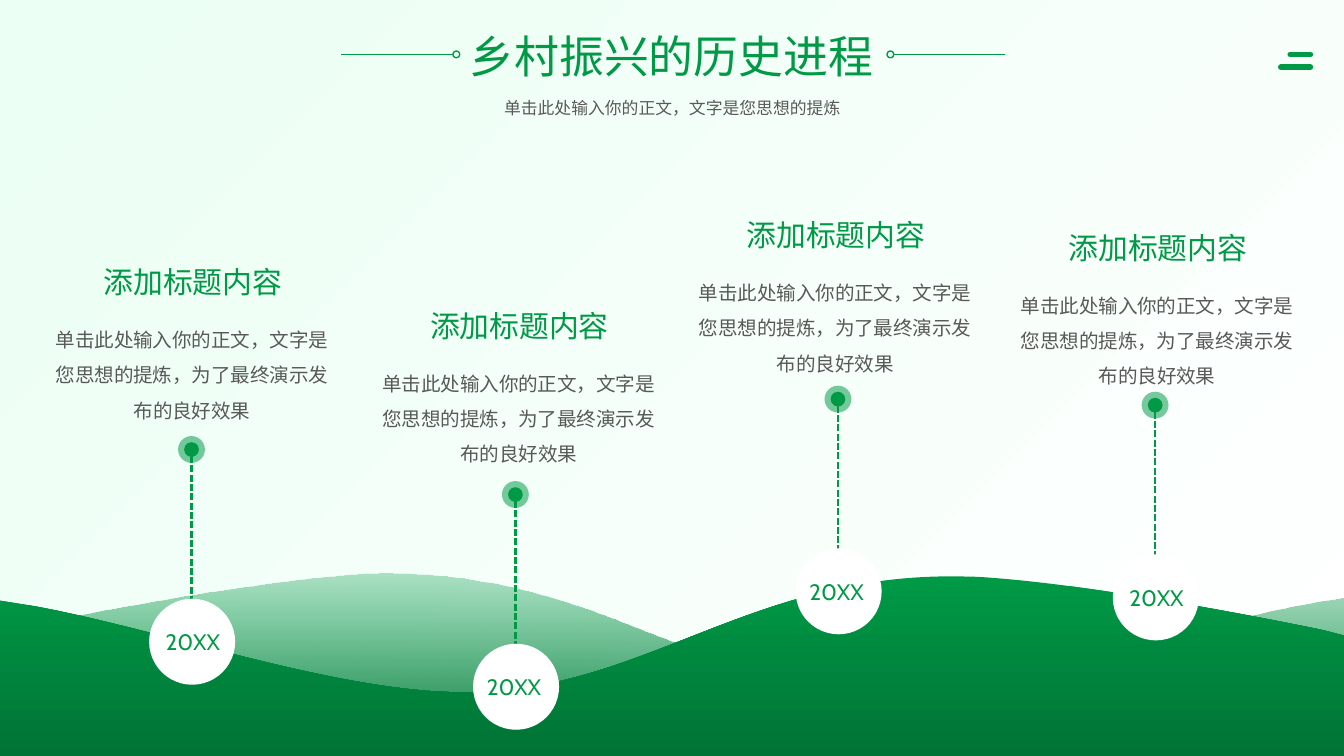
import pptx
import pptx.dml.color
import pptx.enum.dml
import pptx.enum.shapes
import pptx.enum.text
import pptx.oxml.xmlchemy
import pptx.util
from dataclasses import dataclass

PX = 4572  # EMU per px, 200 px to the inch
W, H = 2000, 1125
OVAL = pptx.enum.shapes.MSO_SHAPE.OVAL
STRAIGHT = pptx.enum.shapes.MSO_CONNECTOR.STRAIGHT
MIDDLE = pptx.enum.text.MSO_ANCHOR.MIDDLE
TOP = pptx.enum.text.MSO_ANCHOR.TOP
DASH = pptx.enum.dml.MSO_LINE.SQUARE_DOT


@dataclass(frozen=True)
class Theme:
    green: str = "009946"
    dark: str = "007335"
    mint: str = "EBFFF4"
    white: str = "FFFFFF"
    grey: str = "595959"
    cjk: str = "Noto Sans CJK SC"
    latin: str = "Cabin"
    title: float = 24
    subtitle: float = 9
    heading: float = 16
    body: float = 10.5
    body_pitch: float = 18.9
    year: float = 12


T = Theme()
HEADING = "添加标题内容"
BODY = "单击此处输入你的正文，文字是您思想的提炼，为了最终演示发布的良好效果"
# caption left, caption top, ring left, ring top, year left
MILESTONES = [
    (65, 382, 265, 649, 191),
    (551, 447, 747, 716, 669),
    (1022, 312, 1227, 574, 1149),
    (1501, 331, 1699, 583, 1625),
]
# Hill outline: a pair is a straight line, a triple of pairs a Bezier curve
HILL = [
    (564, 854),
    ((878, 846), (1034, 1020), (1294, 1026)),
    ((1484, 1032), (1752, 934), (1950, 898)),
    (2000, 890), (2000, 1098), (2000, H), (0, H), (0, 1098), (0, 942), (30, 934),
    ((214, 896), (388, 868), (500, 858)),
    ((522, 856), (544, 854), (564, 854)),
]


def rgb(color):
    return pptx.dml.color.RGBColor.from_string(color)


def px(*lengths):
    return [n * PX for n in lengths]


def sub(parent, tag, **attrs):
    el = pptx.oxml.xmlchemy.OxmlElement(tag)
    for name, value in attrs.items():
        el.set(name, value)
    parent.append(el)


def set_alpha(fill_el, percent):
    """Make the first colour inside fill_el opaque by percent only."""
    sub(next(fill_el.iter("{*}srgbClr")), "a:alpha", val=str(percent * 1000))


def gradient(fill, colors, angle):
    fill.gradient()
    fill.gradient_angle = angle
    for stop, color, pos in zip(fill.gradient_stops, colors, (0, 1)):
        stop.color.rgb = rgb(color)
        stop.position = pos


def write(sp, box, text, size, color=T.green, font=T.cjk, anchor=MIDDLE, pitch=None):
    sp.left, sp.top, sp.width, sp.height = px(*box)
    tf = sp.text_frame
    p = tf.paragraphs[0]
    r = p.add_run()
    r.text = text
    formats = {
        tf: {"word_wrap": True, "vertical_anchor": anchor,
             "auto_size": pptx.enum.text.MSO_AUTO_SIZE.NONE},
        p: {"alignment": pptx.enum.text.PP_ALIGN.CENTER},
        r.font: {"size": pptx.util.Pt(size), "name": font},
    }
    if pitch:
        formats[p]["line_spacing"] = pptx.util.Pt(pitch)
    for target, values in formats.items():
        for name, value in values.items():
            setattr(target, name, value)
    r.font.color.rgb = rgb(color)
    sub(r.font._element, "a:ea", typeface=font)


def text_box(s, box, *args, **kwargs):
    write(s.shapes.add_textbox(0, 0, 0, 0), box, *args, **kwargs)


def line(s, x1, y1, x2, y2, width, dash=None, cap="flat"):
    cx = s.shapes.add_connector(STRAIGHT, *px(x1, y1, x2, y2))
    cx.line.width = pptx.util.Pt(width)
    cx.line.color.rgb = rgb(T.green)
    if dash:
        cx.line.dash_style = dash
    cx.line._ln.set("cap", cap)
    sub(cx._element.spPr, "a:effectLst")


def circle(s, x, y, size, fill=None, alpha=None, outline=None):
    sp = s.shapes.add_shape(OVAL, *px(x, y, size, size))
    sp.shadow.inherit = False
    if fill:
        sp.fill.solid()
        sp.fill.fore_color.rgb = rgb(fill)
        if alpha:
            set_alpha(sp._element.spPr, alpha)
    else:
        sp.fill.background()
    if outline:
        sp.line.width = pptx.util.Pt(outline)
        sp.line.color.rgb = rgb(T.green)
    else:
        sp.line.fill.background()


def header(s, x, y):
    write(s.shapes.title, (x, y, 738, 100), "乡村振兴的历史进程", T.title)
    text_box(s, (x + 92, y + 104, 556, 50),
             "单击此处输入你的正文，文字是您思想的提炼", T.subtitle, T.grey)
    mid = y + 49
    for ring, start, end in ((x + 44, x + 44, x - 122), (x + 690, x + 700, x + 866)):
        circle(s, ring, mid - 5, 10, outline=0.75)
        line(s, start, mid, end, mid, 0.5)


def menu_icon(s, x, y):
    for indent, drop in ((14, 0), (0, 19)):
        line(s, x + indent, y + drop, x + 44, y + drop, 3, cap="rnd")


def bend(sp, steps):
    """Turn the straight segments whose step has three points into Bezier curves."""
    segments = list(sp._element.iter("{*}lnTo"))
    for segment, points in zip(segments, steps):
        if len(points) == 3:
            curve = pptx.oxml.xmlchemy.OxmlElement("a:cubicBezTo")
            for x, y in points:
                sub(curve, "a:pt", x=str(x - sp.left), y=str(y - sp.top))
            segment.getparent().replace(segment, curve)


def hill(s, mirrored=False, drop=0, alpha=None):
    steps = [[px(W - x if mirrored else x, y + drop)
              for x, y in (step if isinstance(step[0], tuple) else [step])]
             for step in HILL]
    start, *ends = [points[-1] for points in steps]
    fb = s.shapes.build_freeform(*start)
    fb.add_line_segments(ends, close=True)
    sp = fb.convert_to_shape()
    bend(sp, steps[1:])
    sp.shadow.inherit = False
    sp.line.fill.background()
    gradient(sp.fill, (T.green, T.dark), 270)
    if alpha:
        set_alpha(sp._element.spPr, alpha)


def marker(s, x, y, year_x):
    """Place ring, dashed stem and year disc; x, y is the ring's corner."""
    line(s, x + 20, y + 262, x + 20, y + 27, 1.25, dash=DASH)
    circle(s, x, y, 40, T.green, alpha=53)
    circle(s, x + 9, y + 9, 22, T.green)
    circle(s, x - 43, y + 242, 128, T.white)
    text_box(s, (year_x, y + 276, 192, 60), "20XX", T.year, font=T.latin)


def caption(s, x, y):
    text_box(s, (x, y, 444, 74), HEADING, T.heading)
    text_box(s, (x - 6, y + 79, 454, 174), BODY, T.body, T.grey,
             anchor=TOP, pitch=T.body_pitch)


def main():
    prs = pptx.Presentation()
    prs.slide_width, prs.slide_height = px(W, H)
    s = prs.slides.add_slide(prs.slide_layouts.get_by_name("Title Only"))
    gradient(s.background.fill, (T.mint, T.white), 315)
    header(s, 630, 32)
    menu_icon(s, 1906, 81)
    hill(s, alpha=30)
    hill(s, mirrored=True, drop=4)
    for cap_x, cap_y, ring_x, ring_y, year_x in MILESTONES:
        marker(s, ring_x, ring_y, year_x)
        caption(s, cap_x, cap_y)
    prs.save("out.pptx")


if __name__ == "__main__":
    main()
